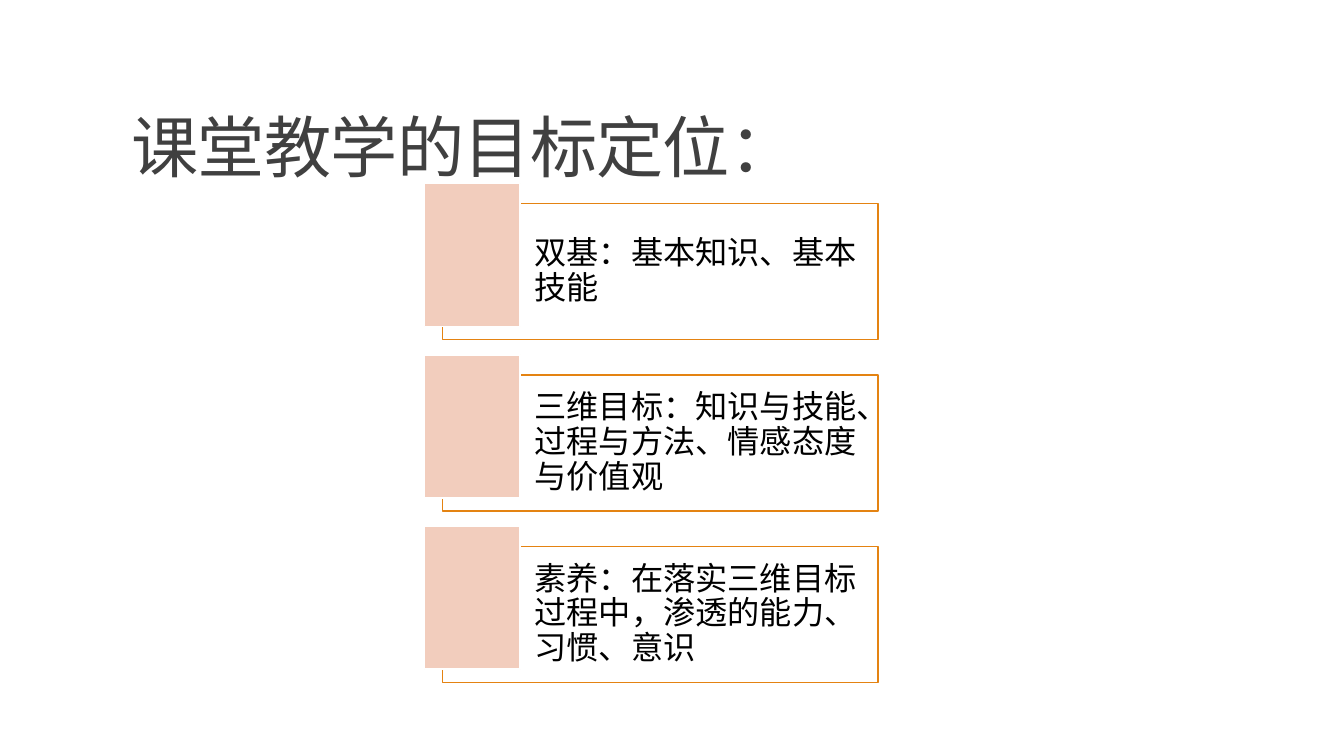
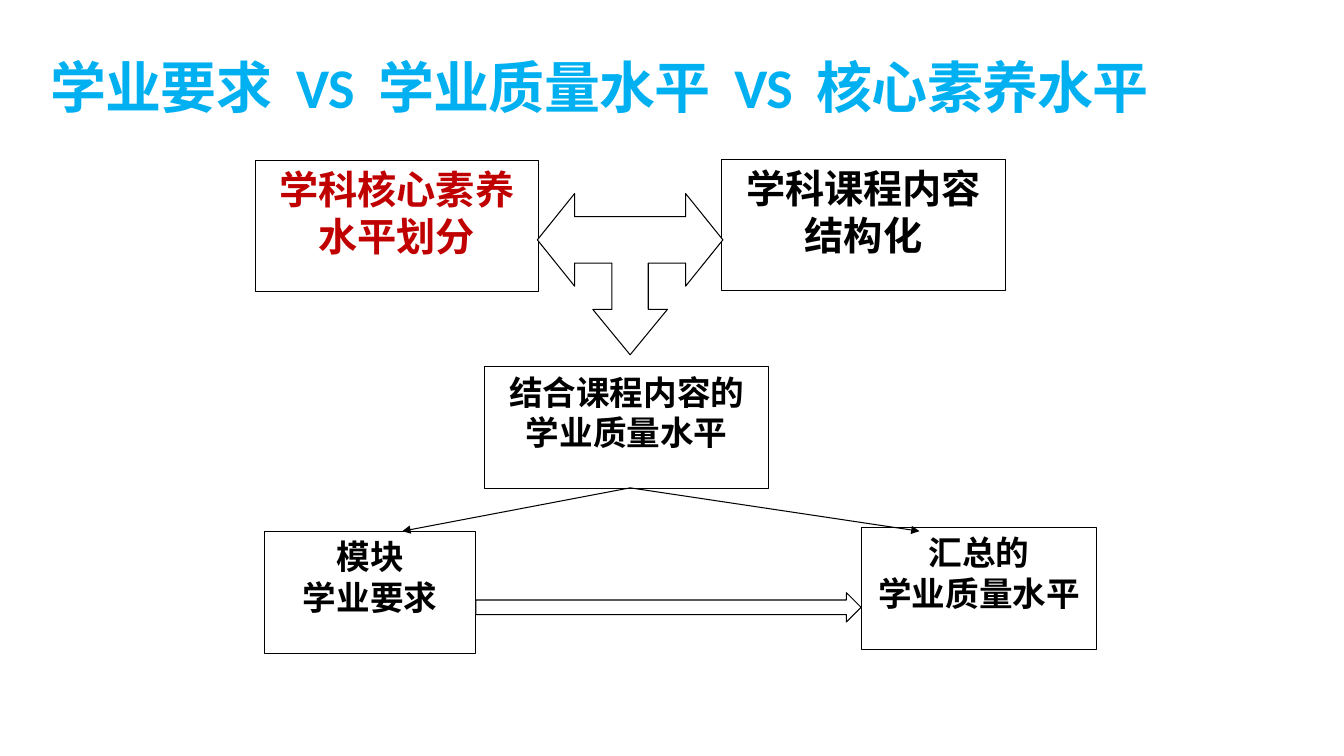
from lxml.etree import SubElement as Sub
from pptx import Presentation
from pptx.dml.color import RGBColor
from pptx.enum.shapes import MSO_CONNECTOR as Link, MSO_SHAPE as Form
from pptx.enum.text import MSO_ANCHOR as Anchor, MSO_AUTO_SIZE as Fit, PP_ALIGN as Align
from pptx.oxml.ns import qn
from pptx.util import Inches, Pt

FONT = "Calibri"
BLACK, WHITE, RED = "000000", "FFFFFF", "C00000"
GREY, BLUE = "404040", "00B0F0"
AMBER, PEACH = "E48312", "F2CDBD"


def tint(code):
    return RGBColor.from_string(code)


def inch(*nums):
    return [Inches(n) for n in nums]


class Deck:
    def __init__(self):
        self.prs = Presentation()
        self.prs.slide_width, self.prs.slide_height = inch(13.33, 7.5)
        self.slide = None

    def page(self, text, area, size, color, bold=False):
        self.slide = self.prs.slides.add_slide(self.prs.slide_layouts[5])
        head = self.slide.shapes.title
        head.left, head.top, head.width, head.height = inch(*area)
        self.label(head, [text], size, color, bold, Align.LEFT, Anchor.BOTTOM, 0.85)
        run = head.text_frame.paragraphs[0].runs[0]
        run.font._element.set("spc", "-50")

    def label(self, shape, lines, size, color, bold, align, anchor, space=1.0):
        frame = shape.text_frame
        frame.word_wrap = True
        frame.auto_size = Fit.NONE
        frame.vertical_anchor = anchor
        for i, line in enumerate(lines):
            para = frame.add_paragraph() if i else frame.paragraphs[0]
            para.alignment = align
            para.line_spacing = space
            run = para.add_run()
            run.text = line
            font = run.font
            font.name, font.size, font.bold = FONT, Pt(size), bold
            font.color.rgb = tint(color)

    def paint(self, shape, fill=WHITE, line=BLACK, width=0.75):
        shape.shadow.inherit = False
        shape.fill.solid()
        shape.fill.fore_color.rgb = tint(fill)
        shape.line.color.rgb = tint(line)
        shape.line.width = Pt(width)
        return shape

    def shape(self, area, form=Form.RECTANGLE, **style):
        return self.paint(self.slide.shapes.add_shape(form, *inch(*area)), **style)

    def card(self, top, text):
        box = self.shape((4.39, top, 4.32, 1.35), line=AMBER, width=1)
        frame = box.text_frame
        frame.margin_left = Inches(0.91)
        frame.margin_top = frame.margin_right = frame.margin_bottom = Inches(0.1)
        self.label(box, [text], 23, BLACK, False, Align.LEFT, Anchor.MIDDLE, 0.9)
        self.shape((4.21, top - 0.2, 0.95, 1.42), fill=PEACH, line=WHITE, width=1.25)

    def box(self, area, lines, size=24, color=BLACK):
        self.label(self.shape(area), lines, size, color, True, Align.CENTER, Anchor.TOP)

    def fork(self, mid, top):
        half = [(0.37, 1.15), (0.18, 1.15), (0.18, 0.69), (0.55, 0.69), (0.55, 0.92),
                (0.92, 0.46), (0.55, 0), (0.55, 0.23)]
        left = [(-x, y) for x, y in reversed(half)]
        spots = [inch(mid + x, top + y) for x, y in [(0, 1.6)] + half + left]
        draft = self.slide.shapes.build_freeform(*spots[0], scale=1.0)
        draft.add_line_segments(spots[1:], close=True)
        self.paint(draft.convert_to_shape())

    def arrow(self, start, end):
        link = self.slide.shapes.add_connector(Link.STRAIGHT, *inch(*start, *end))
        link.line.color.rgb = tint(BLACK)
        link.line.width = Pt(0.75)
        props = link._element.spPr
        Sub(props.find(qn("a:ln")), qn("a:tailEnd"), type="triangle")
        Sub(props, qn("a:effectLst"))


def goals(deck):
    deck.page("课堂教学的目标定位：", (1.2, 0.31, 11, 1.59), 48, GREY)
    cards = ["双基：基本知识、基本技能",
             "三维目标：知识与技能、过程与方法、情感态度与价值观",
             "素养：在落实三维目标过程中，渗透的能力、习惯、意识"]
    for i, text in enumerate(cards):
        deck.card(2.02 + 1.7 * i, text)


def levels(deck):
    deck.page("学业要求  VS  学业质量水平  VS  核心素养水平",
              (0.4, 0.15, 11.7, 1.09), 40, BLUE, True)
    deck.box((2.53, 1.59, 2.81, 1.3), ["学科核心素养", "水平划分"], 28, RED)
    deck.box((7.16, 1.58, 2.81, 1.3), ["学科课程内容", "结构化"], 28)
    deck.box((4.81, 3.64, 2.81, 1.21), ["结合课程内容的学业质量水平"])
    deck.fork(6.25, 1.92)
    deck.box((2.62, 5.27, 2.1, 1.21), ["模块", "学业要求"])
    deck.box((8.54, 5.23, 2.34, 1.21), ["汇总的", "学业质量水平"])
    deck.shape((4.72, 5.88, 3.82, 0.29), Form.RIGHT_ARROW)
    for x in (3.99, 9.12):
        deck.arrow((6.25, 4.84), (x, 5.27))


def main():
    deck = Deck()
    goals(deck)
    levels(deck)
    deck.prs.save("out.pptx")


if __name__ == "__main__":
    main()
